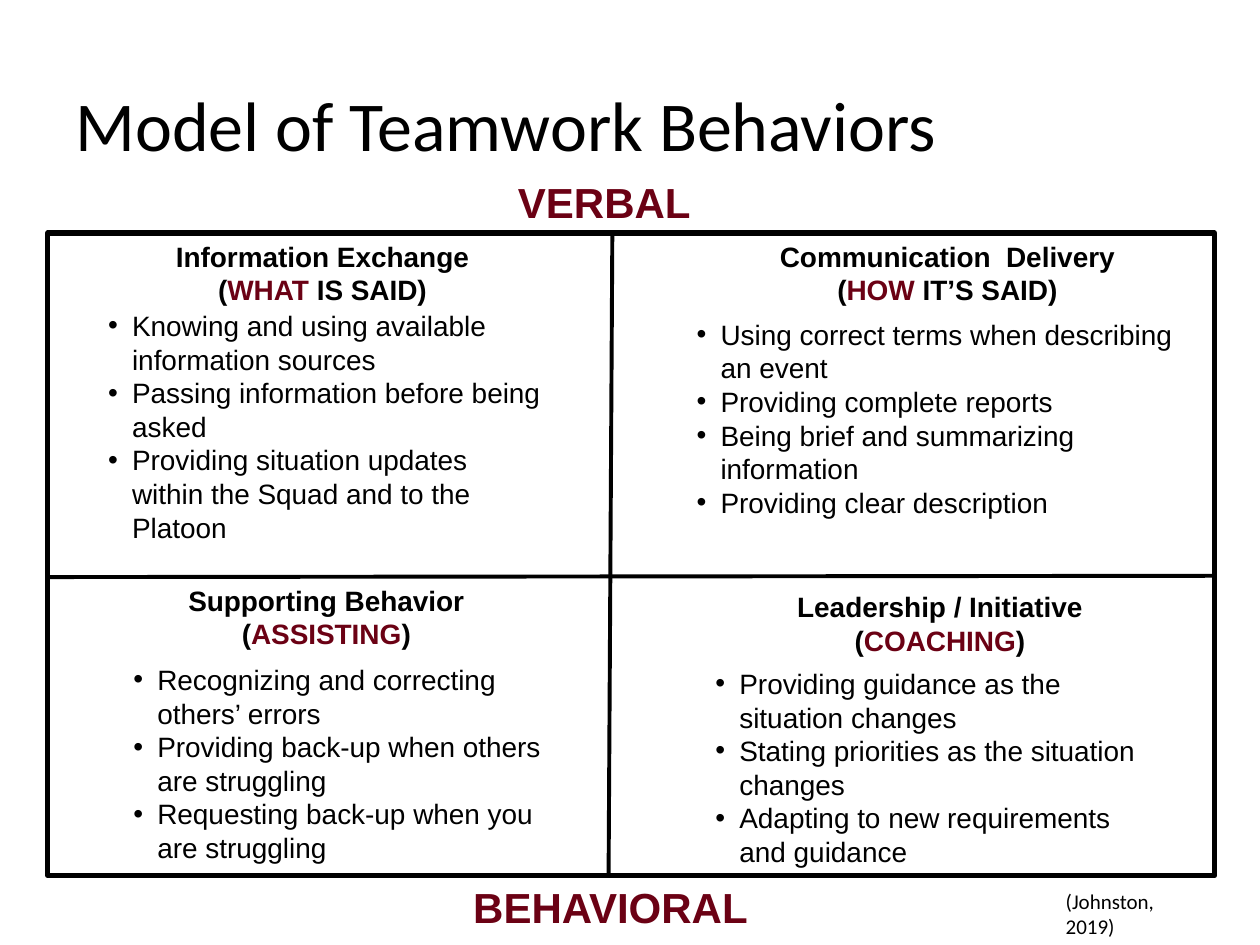
from lxml.etree import SubElement
from pptx import Presentation
from pptx.dml.color import RGBColor
from pptx.enum.shapes import MSO_CONNECTOR, MSO_SHAPE
from pptx.enum.text import MSO_ANCHOR, MSO_AUTO_SIZE as AUTO_SIZE, PP_ALIGN
from pptx.oxml.ns import qn
from pptx.util import Inches, Pt

BLACK = RGBColor(0x00, 0x00, 0x00)
MAROON = RGBColor(0x6B, 0x01, 0x14)

TITLE = {"name": "Calibri", "size": Pt(40)}
AXIS = {"name": "Arial", "size": Pt(24), "bold": True}
HEADING = {"name": "Arial", "size": Pt(16), "bold": True}
BODY = {"name": "Arial", "size": Pt(16)}
CITATION = {"name": "Calibri", "size": Pt(12)}

presentation = Presentation()
presentation.slide_width = Inches(10)
presentation.slide_height = Inches(7.5)
slide = presentation.slides.add_slide(presentation.slide_layouts[6])


def add_text(box, lines, font_values, align=PP_ALIGN.LEFT, wrap=True, bullets=False):
    """Add a text box; each line is a list of (text, colour) runs."""
    shape = slide.shapes.add_textbox(*[Inches(value) for value in box])
    frame = shape.text_frame
    frame.word_wrap = wrap
    for index, runs in enumerate(lines):
        paragraph = frame.paragraphs[0] if index == 0 else frame.add_paragraph()
        paragraph.alignment = align
        if bullets:
            properties = paragraph._p.get_or_add_pPr()
            properties.set("marL", str(Inches(0.19)))
            properties.set("indent", str(Inches(-0.19)))
            SubElement(properties, qn("a:buFont"), typeface="Arial")
            SubElement(properties, qn("a:buChar"), char="•")
        for text, color in runs:
            run = paragraph.add_run()
            run.text = text
            for name, value in font_values.items():
                setattr(run.font, name, value)
            run.font.color.rgb = color
    return frame


# Title
title = add_text((0.5, 0.4, 9, 1.25), [[("Model of Teamwork Behaviors", BLACK)]], TITLE)
title.vertical_anchor = MSO_ANCHOR.MIDDLE
title.paragraphs[0].line_spacing = 0.9

# Frame and the lines that divide it
frame_box = slide.shapes.add_shape(
    MSO_SHAPE.RECTANGLE, Inches(0.38), Inches(1.85), Inches(9.26), Inches(5.1))
frame_box.shadow.inherit = False
frame_box.fill.background()
frame_box.line.color.rgb = BLACK
frame_box.line.width = Pt(3)

for ends in [(0.38, 4.58, 9.64, 4.57), (4.86, 1.85, 4.83, 6.96)]:
    divider = slide.shapes.add_connector(
        MSO_CONNECTOR.STRAIGHT, *[Inches(value) for value in ends])
    divider.line.color.rgb = BLACK
    divider.line.width = Pt(2.25)
    SubElement(divider._element.spPr, qn("a:effectLst"))

# Labels above and below the frame
for label, box in [("VERBAL ", (3.71, 1.35, 2.26, 0.5)),
                   ("BEHAVIORAL", (3.34, 6.95, 3.01, 0.51))]:
    axis = add_text(box, [[(label, MAROON)]], AXIS, PP_ALIGN.CENTER)
    axis.auto_size = AUTO_SIZE.SHAPE_TO_FIT_TEXT

# Quadrants: heading, keyword, rest of the bracket, heading box, list box, items
quadrants = [
    ("Information Exchange", "WHAT ", "IS SAID)",
     (1.28, 1.85, 2.56, 0.64), (0.76, 2.4, 3.66, 1.99),
     ["Knowing and using available information sources",
      "Passing information before being asked",
      "Providing situation updates within the Squad and to the Platoon"]),
    ("Communication  Delivery", "HOW ", "IT’S SAID)",
     (6.07, 1.85, 2.9, 0.64), (5.43, 2.47, 4.19, 1.72),
     ["Using correct terms when describing an event",
      "Providing complete reports",
      "Being brief and summarizing information",
      "Providing clear description"]),
    ("Supporting Behavior", "ASSISTING", ")",
     (1.38, 4.58, 2.42, 0.64), (0.96, 5.21, 3.61, 1.72),
     ["Recognizing and correcting others’ errors",
      "Providing back-up when others are struggling",
      "Requesting back-up when you are struggling"]),
    ("Leadership / Initiative", "COACHING", ")",
     (6.19, 4.63, 2.54, 0.64), (5.58, 5.24, 3.74, 1.72),
     ["Providing guidance as the situation changes",
      "Stating priorities as the situation changes",
      "Adapting to new requirements and guidance"]),
]
for heading, keyword, rest, heading_box, list_box, items in quadrants:
    heading_lines = [[(heading, BLACK)],
                     [("(", BLACK), (keyword, MAROON), (rest, BLACK)]]
    heading_frame = add_text(
        heading_box, heading_lines, HEADING, PP_ALIGN.CENTER, wrap=False)
    list_frame = add_text(
        list_box, [[(item, BLACK)] for item in items], BODY, bullets=True)
    for text_frame in (heading_frame, list_frame):
        text_frame.auto_size = AUTO_SIZE.SHAPE_TO_FIT_TEXT

# Citation
add_text((8.36, 7, 1, 1), [[("(Johnston, 2019)", BLACK)]], CITATION, wrap=False)

presentation.save("out.pptx")
